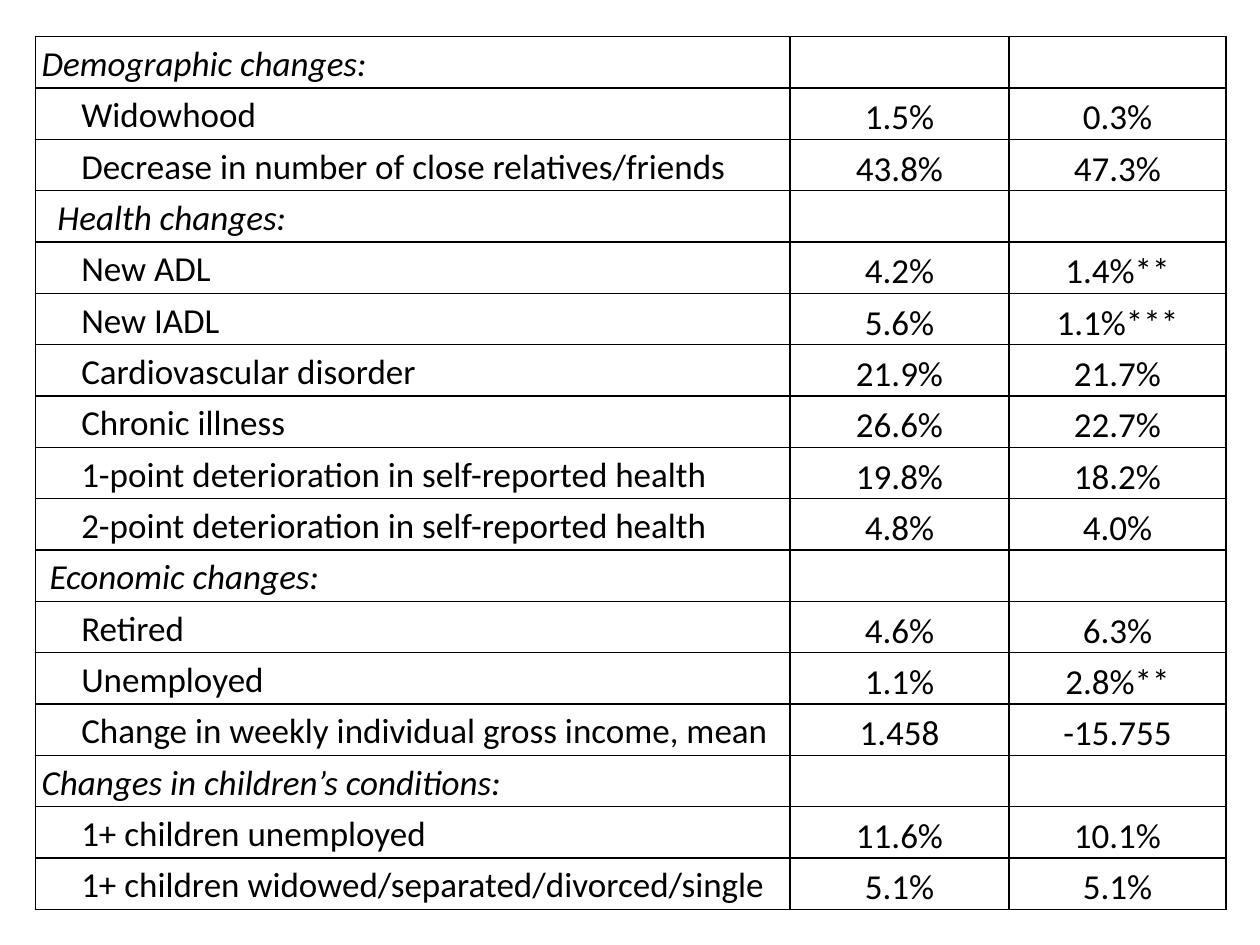
from dataclasses import dataclass

from lxml.etree import SubElement
from pptx import Presentation
from pptx.dml.color import RGBColor
from pptx.enum.text import MSO_ANCHOR as Anchor, PP_ALIGN as Align
from pptx.oxml.ns import qn
from pptx.table import Table, _Cell as Cell
from pptx.util import Inches, Pt

BLACK = RGBColor(0, 0, 0)
FONT = "Calibri"
SIDE = 0.05
SPACE = 0.063
WIDTHS = (5.99, 1.74, 1.72)
HEIGHT = 6.93


@dataclass
class Row:
    label: str
    values: tuple[str, ...] = ("", "")
    spaces: int = 5
    head: bool = False


def group(label: str, spaces: int = 0) -> Row:
    return Row(label, spaces=spaces, head=True)


def item(label: str, *values: str) -> Row:
    return Row(label, values)


ROWS = [
    group("Demographic changes:"),
    item("Widowhood", "1.5%", "0.3%"),
    item("Decrease in number of close relatives/friends", "43.8%", "47.3%"),
    group("Health changes:", 2),
    item("New ADL", "4.2%", "1.4%**"),
    item("New IADL", "5.6%", "1.1%***"),
    item("Cardiovascular disorder", "21.9%", "21.7%"),
    item("Chronic illness", "26.6%", "22.7%"),
    item("1-point deterioration in self-reported health", "19.8%", "18.2%"),
    item("2-point deterioration in self-reported health", "4.8%", "4.0%"),
    group("Economic changes:", 1),
    item("Retired", "4.6%", "6.3%"),
    item("Unemployed", "1.1%", "2.8%**"),
    item("Change in weekly individual gross income, mean", "1.458", "-15.755"),
    group("Changes in children’s conditions:"),
    item("1+ children unemployed", "11.6%", "10.1%"),
    item("1+ children widowed/separated/divorced/single", "5.1%", "5.1%"),
]


def border(cell: Cell) -> None:
    props = cell._tc.get_or_add_tcPr()
    for side in ("a:lnL", "a:lnR", "a:lnT", "a:lnB"):
        line = SubElement(props, qn(side), w=str(Pt(1)))
        fill = SubElement(line, qn("a:solidFill"))
        SubElement(fill, qn("a:srgbClr"), val=str(BLACK))


def write(cell: Cell, text: str, align: Align, anchor: Anchor,
          indent: float = 0, italic: bool = False) -> None:
    border(cell)
    cell.fill.background()
    cell.margin_left = Inches(SIDE + indent)
    cell.margin_right = Inches(SIDE)
    cell.margin_top = cell.margin_bottom = 0
    cell.vertical_anchor = anchor
    cell.text = text
    para = cell.text_frame.paragraphs[0]
    para.alignment = align
    para.line_spacing = 1.15
    font = para.font
    font.name, font.size, font.italic = FONT, Pt(20), italic
    font.color.rgb = BLACK


def fill_row(table: Table, index: int, row: Row) -> None:
    write(table.cell(index, 0), row.label, Align.LEFT, Anchor.TOP,
          row.spaces * SPACE, row.head)
    for col, value in enumerate(row.values, 1):
        write(table.cell(index, col), value, Align.CENTER, Anchor.BOTTOM)


def main() -> None:
    deck = Presentation()
    deck.slide_width, deck.slide_height = Inches(10), Inches(7.5)
    slide = deck.slides.add_slide(deck.slide_layouts[6])
    table = slide.shapes.add_table(
        len(ROWS), len(WIDTHS), Inches(0.28), Inches(0.29),
        Inches(sum(WIDTHS)), Inches(HEIGHT)).table
    table.first_row = table.horz_banding = False
    for column, width in zip(table.columns, WIDTHS):
        column.width = Inches(width)
    for index, row in enumerate(ROWS):
        fill_row(table, index, row)
    deck.save("out.pptx")


if __name__ == "__main__":
    main()
